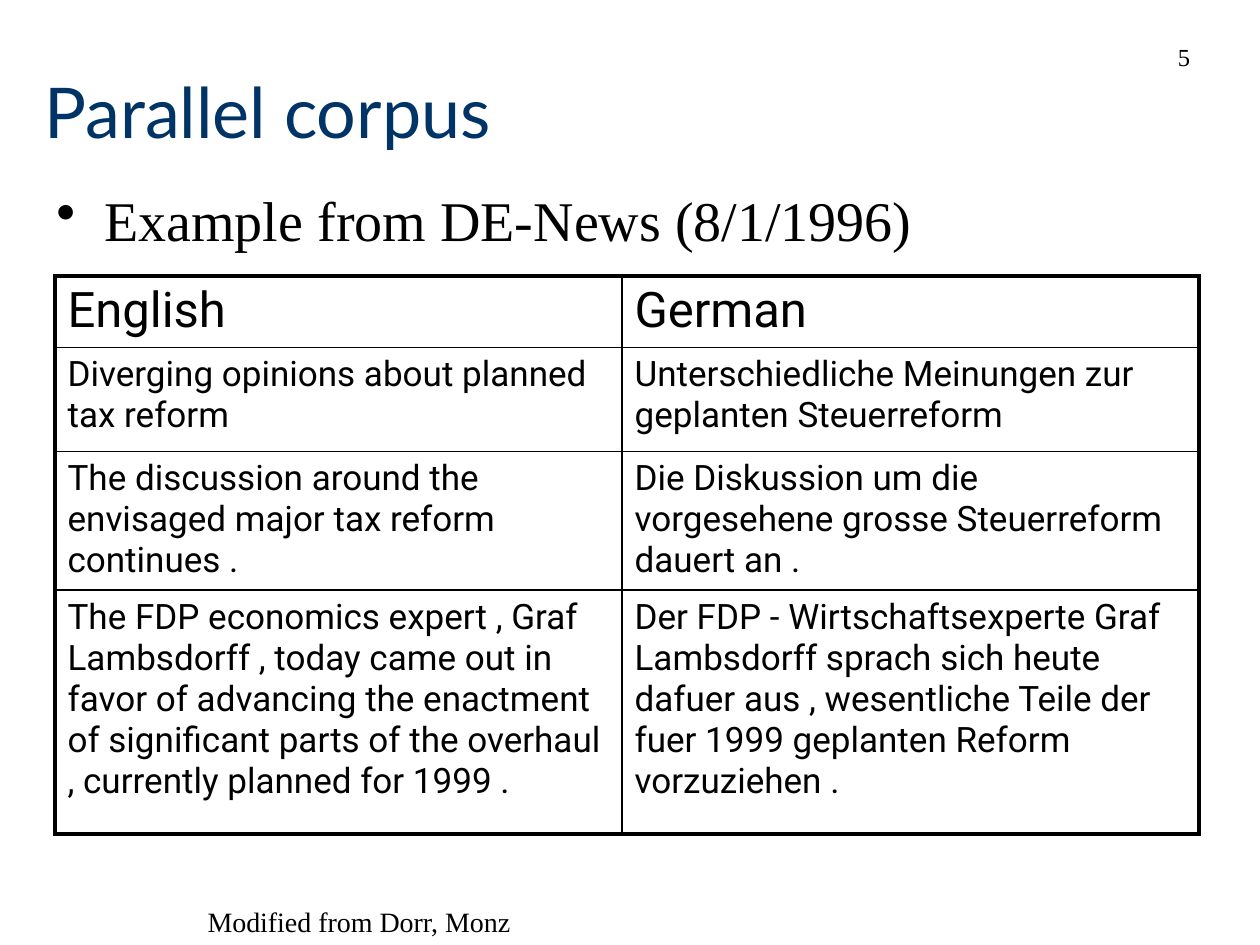
from dataclasses import dataclass

from pptx import Presentation
from pptx import util as u
from pptx.dml.color import RGBColor
from pptx.enum import text
from pptx.oxml import ns
from pptx.oxml import xmlchemy
from lxml import etree

BLACK = RGBColor(0x00, 0x00, 0x00)
NAVY = RGBColor(0x00, 0x33, 0x66)
SERIF = "Times New Roman"
TABLE_FONT = "Roboto"
TITLE_FONT = "Lato"
PX_PER_INCH = 126
THIN, THICK = 1, 2.25
COLUMN_WIDTHS = (567, 577)


@dataclass(frozen=True)
class Box:
    left: int
    top: int
    width: int
    height: int

    def emu(self) -> tuple:
        return tuple(map(px, (self.left, self.top, self.width, self.height)))


@dataclass(frozen=True)
class CorpusRow:
    english: str
    german: str
    height: int
    size: int = 20


CORPUS = (
    CorpusRow("English", "German", 70, 28),
    CorpusRow(
        "Diverging opinions about planned tax reform",
        "Unterschiedliche Meinungen zur geplanten Steuerreform",
        104,
    ),
    CorpusRow(
        "The discussion around the envisaged major tax reform continues .",
        "Die Diskussion um die vorgesehene grosse Steuerreform dauert an .",
        138,
    ),
    CorpusRow(
        "The FDP economics expert , Graf Lambsdorff , today came out in favor of "
        "advancing the enactment of significant parts of the overhaul , currently "
        "planned for 1999 .",
        "Der FDP - Wirtschaftsexperte Graf Lambsdorff sprach sich heute dafuer aus , "
        "wesentliche Teile der fuer 1999 geplanten Reform vorzuziehen .",
        244,
    ),
)


def px(length: int) -> int:
    return round(length * u.Inches(1) / PX_PER_INCH)


def add_element(parent, tag: str, **attributes: str):
    return etree.SubElement(parent, ns.qn(tag), attributes)


def write(frame, content: str, *, size: int, font: str = SERIF, color=BLACK,
          align=text.PP_ALIGN.LEFT, space_percent: int = 0, bullet: str = "",
          indent: int = 0) -> None:
    paragraph = frame.paragraphs[0]
    paragraph.alignment = align
    run = paragraph.add_run()
    run.text = content
    run.font.size = u.Pt(size)
    run.font.name = font
    run.font.color.rgb = color
    properties = paragraph._p.get_or_add_pPr()
    if space_percent:
        spacing = add_element(properties, "a:spcBef")
        add_element(spacing, "a:spcPct", val=str(space_percent * 1000))
    if bullet:
        properties.set("marL", str(px(indent)))
        properties.set("indent", str(-px(indent)))
        add_element(properties, "a:buChar", char=bullet)


def add_text(slide, box: Box, content: str, *, wrap: bool = True,
             anchor=text.MSO_ANCHOR.TOP, **text_format) -> None:
    frame = slide.shapes.add_textbox(*box.emu()).text_frame
    frame.word_wrap = wrap
    frame.vertical_anchor = anchor
    write(frame, content, **text_format)


def set_title(slide, box: Box, content: str) -> None:
    title = slide.shapes.title
    title.left, title.top, title.width, title.height = box.emu()
    title.text_frame.vertical_anchor = text.MSO_ANCHOR.MIDDLE
    title.text_frame.auto_size = text.MSO_AUTO_SIZE.NONE
    write(title.text_frame, content, size=40, font=TITLE_FONT, color=NAVY)


def set_borders(cell, widths: dict) -> None:
    properties = cell._tc.get_or_add_tcPr()
    for side, width in widths.items():
        line = add_element(properties, f"a:ln{side}", w=str(u.Pt(width)))
        fill = add_element(line, "a:solidFill")
        add_element(fill, "a:srgbClr", val=str(BLACK))


def add_corpus_table(slide, left: int, top: int) -> None:
    box = Box(left, top, sum(COLUMN_WIDTHS), sum(row.height for row in CORPUS))
    table = slide.shapes.add_table(len(CORPUS), len(COLUMN_WIDTHS), *box.emu()).table
    table.first_row = table.horz_banding = False
    for column, width in zip(table.columns, COLUMN_WIDTHS):
        column.width = px(width)
    last_row, last_column = len(CORPUS) - 1, len(COLUMN_WIDTHS) - 1
    for i, row in enumerate(CORPUS):
        table.rows[i].height = px(row.height)
        for j, content in enumerate((row.english, row.german)):
            cell = table.cell(i, j)
            set_borders(cell, {
                "L": THICK if j == 0 else THIN,
                "R": THICK if j == last_column else THIN,
                "T": THICK if i == 0 else THIN,
                "B": THICK if i == last_row else THIN,
            })
            cell.fill.background()
            write(cell.text_frame, content, size=row.size, font=TABLE_FONT,
                  space_percent=20)


def main() -> None:
    presentation = Presentation()
    presentation.slide_width, presentation.slide_height = u.Inches(10), u.Inches(7.5)
    slide = presentation.slides.add_slide(presentation.slide_layouts[5])
    add_text(slide, Box(1053, 25, 262, 63), "5", size=14, wrap=False,
             anchor=text.MSO_ANCHOR.MIDDLE, align=text.PP_ALIGN.CENTER)
    set_title(slide, Box(32, 53, 1166, 116), "Parallel corpus")
    add_text(slide, Box(44, 179, 1134, 672), "Example from DE-News (8/1/1996)",
             size=32, space_percent=20, bullet="•", indent=48)
    add_corpus_table(slide, 55, 276)
    add_text(slide, Box(78, 898, 562, 47), "Modified from Dorr, Monz", size=16,
             align=text.PP_ALIGN.CENTER)
    presentation.save("out.pptx")


if __name__ == "__main__":
    main()
